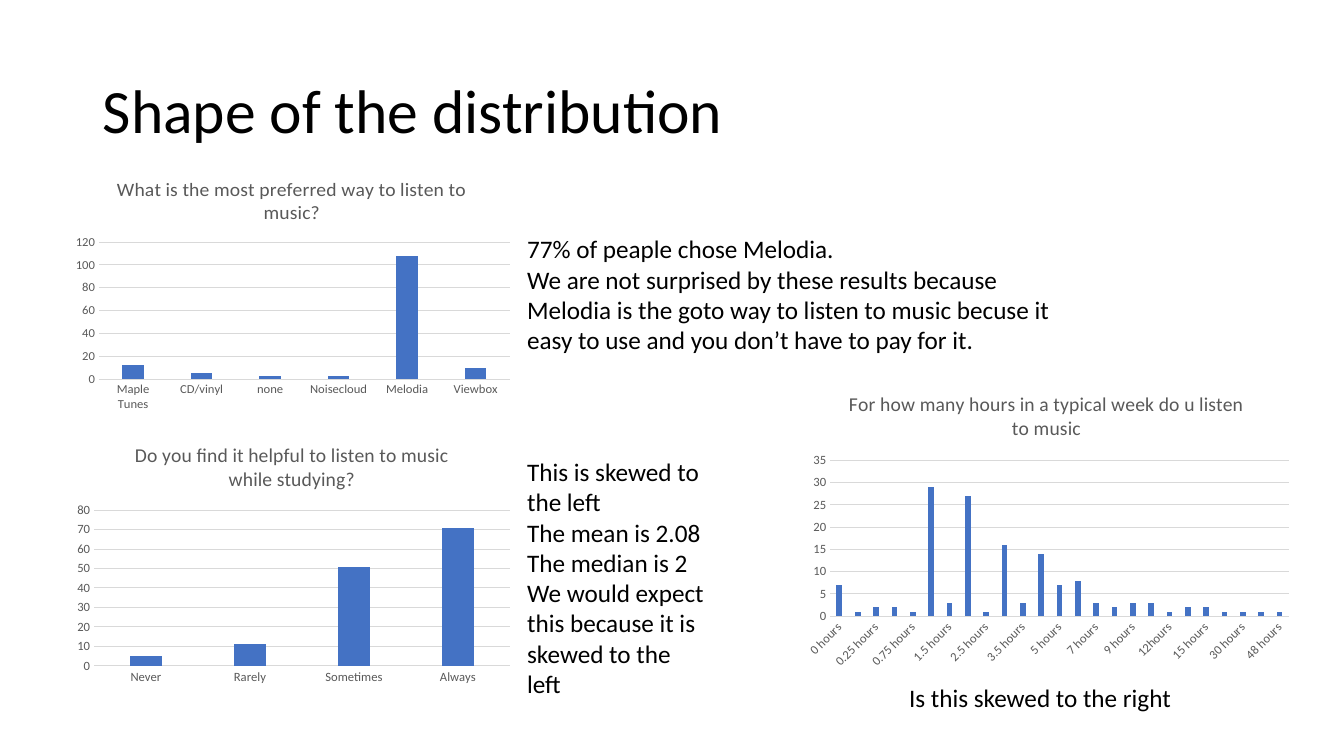
from dataclasses import dataclass

from lxml import etree
from pptx import Presentation
from pptx import util as u
from pptx.chart.data import CategoryChartData
from pptx.dml.color import RGBColor
from pptx.enum import chart as ch, text
from pptx.oxml.ns import qn

FONT = "Calibri"
BLACK, GREY, RULE, BAR = "000000", "595959", "D9D9D9", "4472C4"
WIDTH, HEIGHT = u.Inches(13.333), u.Inches(7.5)


@dataclass
class Area:
    """A region in percent of the slide's width and height."""
    left: float
    top: float
    width: float
    height: float

    def box(self) -> tuple[int, int, int, int]:
        return (int(WIDTH * self.left / 100), int(HEIGHT * self.top / 100),
                int(WIDTH * self.width / 100), int(HEIGHT * self.height / 100))


@dataclass
class Survey:
    question: str
    area: Area
    plot: Area  # percent of the chart's own size
    answers: dict[str, int]
    top: int
    step: int


@dataclass
class Remark:
    area: Area
    lines: list[str]


SURVEYS = [
    Survey("What is the most preferred way to listen to music?",
           Area(4.95, 21.47, 33.53, 32.93), Area(7.2, 33.3, 91.2, 57),
           {"Maple Tunes": 12, "CD/vinyl": 5, "none": 3, "Noisecloud": 3,
            "Melodia": 108, "Viewbox": 10}, 120, 20),
    Survey("For how many hours in a typical week do u listen to music",
           Area(59.11, 49.6, 37.5, 40), Area(7.1, 28.2, 91, 51.6),
           {"0 hours": 7, "0.15 hours": 1, "0.25 hours": 2, "0.5 hours": 2,
            "0.75 hours": 1, "1 hours": 29, "1.5 hours": 3, "2hours": 27,
            "2.5 hours": 1, "3 hours": 16, "3.5 hours": 3, "4 hours": 14,
            "5 hours": 7, "6 hours": 8, "7 hours": 3, "8 hours": 2,
            "9 hours": 3, "10 hours": 3, "12hours": 1, "14 hours": 2,
            "15 hours": 2, "18 hours": 1, "30 hours": 1, "40 hours": 1,
            "48 hours": 1}, 35, 5),
    Survey("Do you find it helpful to listen to music while studying?",
           Area(4.95, 56.53, 33.53, 34.67), Area(6.1, 31.6, 92.3, 59.4),
           {"Never": 5, "Rarely": 11, "Sometimes": 51, "Always": 71}, 80, 10),
]

REMARKS = [
    Remark(Area(66.9, 89.6, 22.28, 5.33), ["Is this skewed to the right"]),
    Remark(Area(38.48, 59.73, 14.92, 33.6),
           ["This is skewed to the left", "The mean is 2.08", "The median is 2",
            "We would expect this because it is skewed to the left"]),
    Remark(Area(38.48, 30.27, 41.25, 17.47),
           ["77% of peaple chose Melodia.",
            "We are not surprised by these results because Melodia is the goto way "
            "to listen to music becuse it easy to use and you don’t have to pay for it."]),
]


def colour(value: str) -> RGBColor:
    return RGBColor.from_string(value)


def set_font(font, size: float, hue: str) -> None:
    font.name, font.size, font.bold = FONT, u.Pt(size), False
    font.color.rgb = colour(hue)


def set_rule(line) -> None:
    line.color.rgb = colour(RULE)
    line.width = u.Pt(0.75)


def place_plot(chart, plot: Area) -> None:
    """Fix the inner plot area within the chart."""
    plot_area = chart.plots[0]._element.getparent()
    for old in plot_area.findall(qn("c:layout")):
        plot_area.remove(old)
    layout = etree.Element(qn("c:layout"))
    manual = etree.SubElement(layout, qn("c:manualLayout"))
    settings = {"layoutTarget": "inner", "xMode": "edge", "yMode": "edge",
                "x": plot.left / 100, "y": plot.top / 100,
                "w": plot.width / 100, "h": plot.height / 100}
    for tag, value in settings.items():
        etree.SubElement(manual, qn(f"c:{tag}")).set("val", str(value))
    plot_area.insert(0, layout)


def draw_survey(slide, survey: Survey) -> None:
    data = CategoryChartData()
    data.categories = list(survey.answers)
    data.add_series("Series 1", list(survey.answers.values()))
    chart = slide.shapes.add_chart(
        ch.XL_CHART_TYPE.COLUMN_CLUSTERED, *survey.area.box(), data).chart
    set_font(chart.font, 10, BLACK)
    chart.has_legend = False

    # Question
    chart.has_title = True
    question = chart.chart_title.text_frame
    question.text = survey.question
    set_font(question.paragraphs[0].runs[0].font, 14, GREY)
    chart.chart_title.include_in_layout = False

    # Bars
    bars = chart.plots[0]
    bars.gap_width, bars.overlap, bars.vary_by_categories = 219, -27, False
    fill = bars.series[0].format.fill
    fill.solid()
    fill.fore_color.rgb = colour(BAR)

    # Axes, with automatic label rotation
    answers, counts = chart.category_axis, chart.value_axis
    for axis in (answers, counts):
        axis.major_tick_mark = axis.minor_tick_mark = ch.XL_TICK_MARK.NONE
        set_font(axis.tick_labels.font, 9, GREY)
        axis._element.find(qn("c:txPr")).find(qn("a:bodyPr")).set("rot", "-60000000")
    set_rule(answers.format.line)
    counts.format.line.fill.background()
    counts.has_major_gridlines = True
    set_rule(counts.major_gridlines.format.line)
    counts.minimum_scale, counts.maximum_scale = 0, survey.top
    counts.major_unit = survey.step
    place_plot(chart, survey.plot)


def draw_remark(slide, remark: Remark) -> None:
    frame = slide.shapes.add_textbox(*remark.area.box()).text_frame
    frame.word_wrap = True
    frame.auto_size = text.MSO_AUTO_SIZE.SHAPE_TO_FIT_TEXT
    frame.text = "\n".join(remark.lines)
    for paragraph in frame.paragraphs:
        set_font(paragraph.runs[0].font, 18, BLACK)


def draw_heading(slide, wording: str, area: Area) -> None:
    heading = slide.shapes.title
    heading.left, heading.top, heading.width, heading.height = area.box()
    frame = heading.text_frame
    frame.text = wording
    frame.auto_size = text.MSO_AUTO_SIZE.NONE
    frame.vertical_anchor = text.MSO_ANCHOR.MIDDLE
    paragraph = frame.paragraphs[0]
    paragraph.alignment, paragraph.line_spacing = text.PP_ALIGN.LEFT, 0.9
    set_font(paragraph.runs[0].font, 44, BLACK)


def main() -> None:
    deck = Presentation()
    deck.slide_width, deck.slide_height = WIDTH, HEIGHT
    slide = deck.slides.add_slide(deck.slide_layouts.get_by_name("Title Only"))
    draw_heading(slide, "Shape of the distribution", Area(6.9, 5.33, 86.25, 19.33))
    for survey in SURVEYS:
        draw_survey(slide, survey)
    for remark in REMARKS:
        draw_remark(slide, remark)
    deck.save("out.pptx")


if __name__ == "__main__":
    main()
